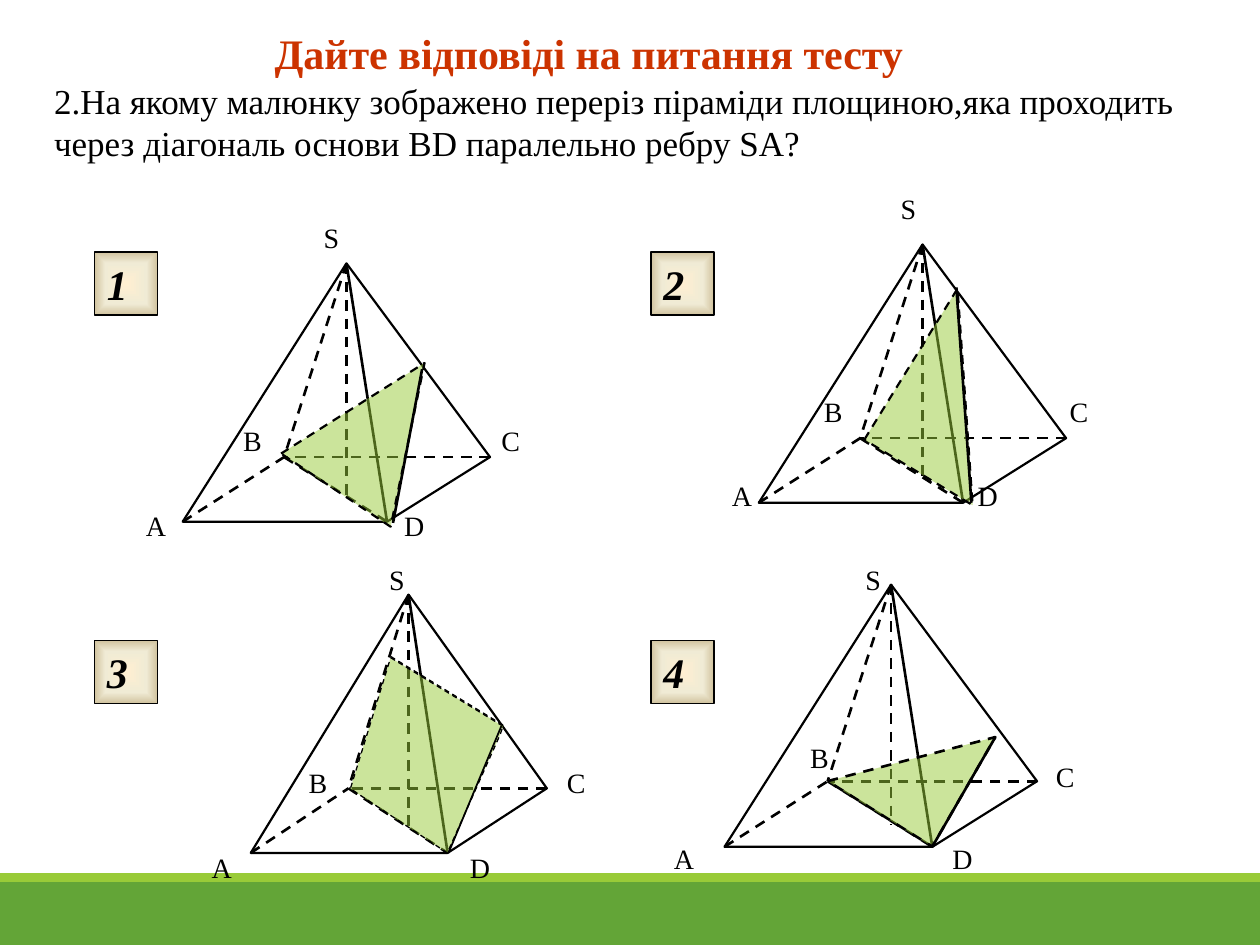
from pptx import Presentation
from pptx.dml.color import RGBColor
from pptx.enum.dml import MSO_LINE
from pptx.enum.shapes import MSO_CONNECTOR, MSO_SHAPE
from pptx.enum.text import MSO_ANCHOR, PP_ALIGN
from pptx.oxml import parse_xml
from pptx.oxml.ns import nsdecls, qn
from pptx.util import Pt
from lxml.etree import SubElement

BLACK = RGBColor(0, 0, 0)
RED = RGBColor(0xCC, 0x33, 0x00)
GREEN = RGBColor(0x63, 0xA5, 0x37)
LIME = RGBColor(0x99, 0xCB, 0x38)
BUTTON_STOPS = [(0, "FFEFD1"), (65, "F0EBD5"), (100, "D1C39F")]

# Corners as fractions of the pyramid's width and height
CORNERS = {"A": (0, 1), "B": (0.33, 0.75), "C": (1, 0.75), "D": (0.665, 1),
           "S": (0.533, 0), "O": (0.533, 0.917)}

# Frame; cutting section, its outline width and extra edges; label positions
PYRAMIDS = [
    dict(frame=(104.4, 150.5, 175.6, 147.6),
         section=[(160.6, 259.2), (242.6, 207.4), (223.2, 301)], width=1.25,
         edges=[((224.6, 298.8), (241.2, 211), 1.5, False)],
         labels=dict(B=(131.8, 238.3), A=(76.3, 287.3), C=(279.4, 238.3),
                     D=(223.9, 287.3), S=(177.8, 122.4))),
    dict(frame=(433.6, 139.7, 175.6, 147.6),
         section=[(493.9, 251.3), (547.2, 164.9), (555.8, 288.7)], width=1.25,
         edges=[((555.1, 287.3), (546.5, 164.2), 1.5, False)],
         labels=dict(B=(463.7, 221.8), A=(411.1, 270), C=(604.1, 221.8),
                     D=(551.5, 270), S=(507.6, 105.8))),
    dict(frame=(143.3, 339.8, 169.2, 147.6),
         section=[(223.2, 375.8), (285.8, 414), (287.6, 414.5), (285.8, 419.8),
                  (255.6, 487.4), (200.2, 450.7)], width=0,
         edges=[((256.3, 487.4), (286.6, 414.7), 1, False),
                ((223.2, 375.1), (288, 414.7), 0.75, True)],
         labels=dict(B=(169.2, 434.2), A=(113.8, 482.4), C=(316.8, 434.2),
                     D=(261.4, 482.4), S=(215.3, 318.2))),
    dict(frame=(414, 334.1, 178.6, 149.8),
         section=[(473, 446.4), (568.8, 421.2), (532.8, 483.8)], width=1.5,
         edges=[((532.8, 483.8), (568.8, 421.2), 1.5, False)],
         labels=dict(B=(455.8, 419.8), A=(378, 477.4), C=(596.2, 430.6),
                     D=(537.1, 477.4), S=(487.4, 318.2))),
]


class Board:
    font = "Times New Roman"

    def __init__(self, s):
        self.s = s
        self.shapes = s.shapes

    def add_words(self, tf, text, size, color=BLACK, bold=False, italic=False):
        tf.word_wrap = True
        p = tf.paragraphs[0]
        p.alignment = PP_ALIGN.LEFT
        r = p.add_run()
        r.text = text
        f = r.font
        f.name, f.size, f.bold, f.italic = self.font, Pt(size), bold, italic
        f.color.rgb = color

    def text(self, x, y, w, h, text, size, **style):
        box = self.shapes.add_textbox(Pt(x), Pt(y), Pt(w), Pt(h))
        self.add_words(box.text_frame, text, size, **style)

    def bar(self, y, h, color):
        sp = self.shapes.add_shape(MSO_SHAPE.RECTANGLE, 0, Pt(y), Pt(720), Pt(h))
        sp.shadow.inherit = False
        sp.fill.solid()
        sp.fill.fore_color.rgb = color
        sp.line.fill.background()

    def stroke(self, line, width, dashed):
        line.color.rgb = BLACK
        line.width = Pt(width)
        if dashed:
            line.dash_style = MSO_LINE.DASH

    def line(self, start, end, width=1.5, dashed=False):
        ends = [Pt(v) for v in (*start, *end)]
        c = self.shapes.add_connector(MSO_CONNECTOR.STRAIGHT, *ends)
        self.stroke(c.line, width, dashed)
        SubElement(c._element.spPr, qn("a:effectLst"))

    def polygon(self, points, width=1.25, dashed=False, fill=None):
        """Closed outline; a fill colour is laid on half transparent."""
        first, *rest = [(Pt(x), Pt(y)) for x, y in points]
        builder = self.shapes.build_freeform(*first)
        builder.add_line_segments(rest, close=True)
        sp = builder.convert_to_shape()
        sp.shadow.inherit = False
        if fill is None:
            sp.fill.background()
        else:
            sp.fill.solid()
            sp.fill.fore_color.rgb = fill
            clr = sp._element.spPr.find(qn("a:solidFill"))[0]
            SubElement(clr, qn("a:alpha"), val="50000")
        self.stroke(sp.line, width, dashed)

    def button(self, x, y, text):
        sp = self.shapes.add_shape(MSO_SHAPE.ACTION_BUTTON_CUSTOM,
                                   Pt(x), Pt(y), Pt(36), Pt(36))
        sp.shadow.inherit = False
        stops = "".join(f'<a:gs pos="{pos * 1000}"><a:srgbClr val="{c}"/></a:gs>'
                        for pos, c in BUTTON_STOPS)
        grad = parse_xml(
            f'<a:gradFill {nsdecls("a")}><a:gsLst>{stops}</a:gsLst><a:path path="rect">'
            '<a:fillToRect l="50000" t="50000" r="50000" b="50000"/></a:path></a:gradFill>')
        sp._element.spPr.find(qn("a:prstGeom")).addnext(grad)
        self.stroke(sp.line, 0.75, False)
        sp.text_frame.vertical_anchor = MSO_ANCHOR.MIDDLE
        self.add_words(sp.text_frame, text, 24, bold=True, italic=True)

    def pyramid(self, frame, section, width, edges, labels):
        """Pyramid SABCD with its cutting section, as one group."""
        self.shapes = self.s.shapes.add_group_shape().shapes
        x, y, w, h = frame
        at = {k: (x + fx * w, y + fy * h) for k, (fx, fy) in CORNERS.items()}
        self.polygon([at[k] for k in "ASCD"])
        self.line(at["S"], at["D"])
        for a, b in ("SB", "CB", "AB", "BD", "SO"):
            self.line(at[a], at[b], dashed=True)
        self.polygon(section, width, dashed=True, fill=LIME)
        for edge in edges:
            self.line(*edge)
        for name, (lx, ly) in labels.items():
            self.text(lx, ly, 46 if name in "DS" else 37, 26.6, name, 16)
        self.shapes = self.s.shapes


def main():
    prs = Presentation()
    prs.slide_width, prs.slide_height = Pt(720), Pt(540)
    board = Board(prs.slides.add_slide(prs.slide_layouts[6]))
    board.bar(504, 36, GREEN)
    board.bar(499, 5, LIME)
    board.text(23.8, 41.8, 678, 91.4,
               "2.На якому малюнку зображено переріз піраміди площиною,яка проходить "
               "через діагональ основи BD паралельно ребру SA?", 20)
    for pyramid in PYRAMIDS:
        board.pyramid(**pyramid)
    board.text(149.8, 12.2, 432, 36, "Дайте відповіді на питання тесту", 24,
               color=RED, bold=True)
    for i in range(4):
        row, col = divmod(i, 2)
        board.button(54 + col * 318, 144 + row * 222, str(i + 1))
    prs.save("out.pptx")


if __name__ == "__main__":
    main()
